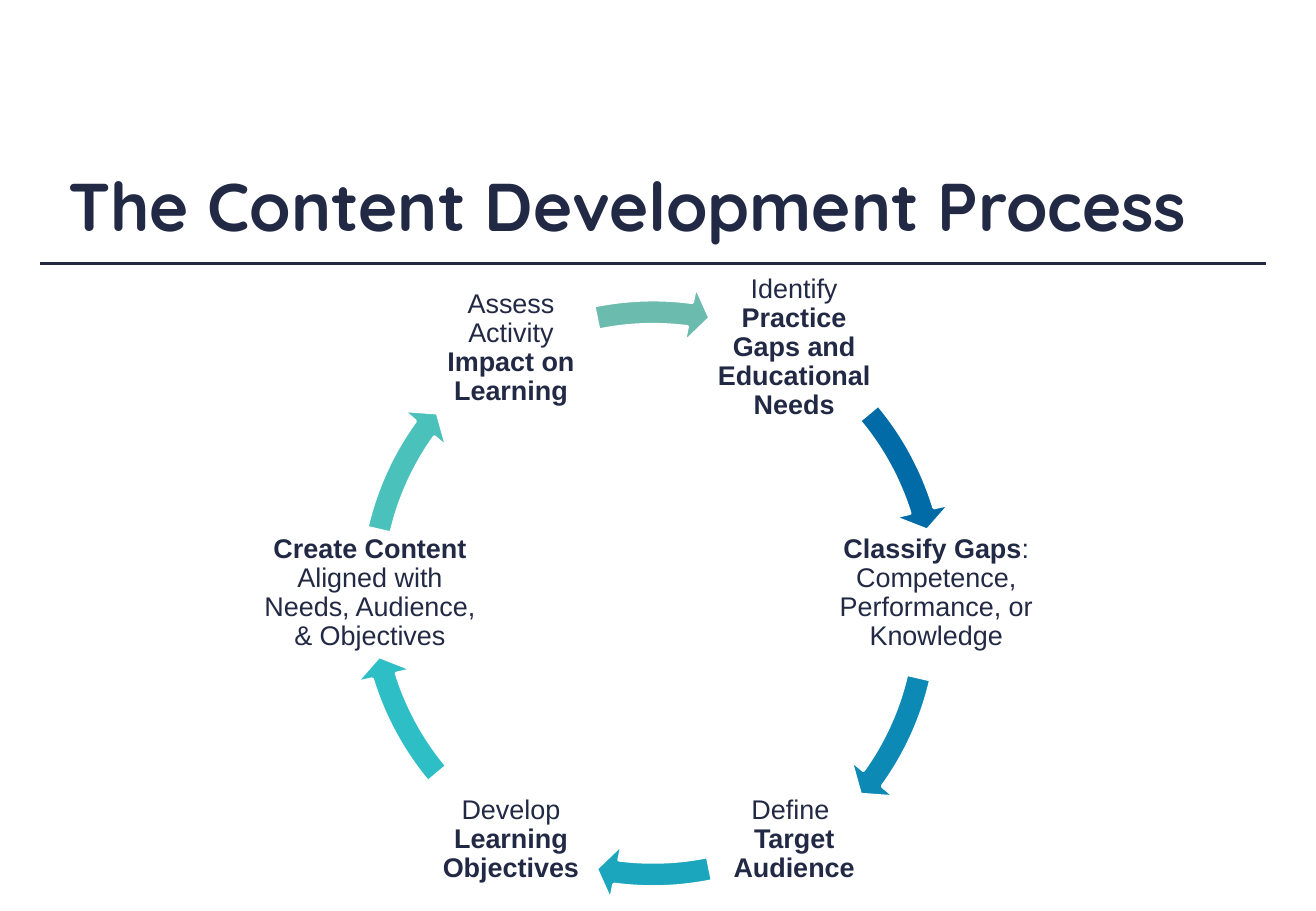
"""Build the slide showing the content development process as a six-step cycle."""
from dataclasses import dataclass

from lxml.etree import SubElement
from pptx import Presentation
from pptx.dml.color import RGBColor
from pptx.enum.shapes import MSO_CONNECTOR, MSO_SHAPE
from pptx.enum.text import MSO_ANCHOR, MSO_AUTO_SIZE, PP_ALIGN
from pptx.oxml.ns import qn
from pptx.slide import Slide
from pptx.text.text import TextFrame, _Paragraph
from pptx.util import Inches, Pt

NAVY = RGBColor(0x22, 0x29, 0x44)
WHITE = RGBColor(0xFF, 0xFF, 0xFF)
DEEP_BLUE = RGBColor(0x00, 0x6B, 0xA6)
BLUE = RGBColor(0x0C, 0x89, 0xB4)
CYAN = RGBColor(0x1B, 0xA6, 0xBE)
TURQUOISE = RGBColor(0x2E, 0xBE, 0xC5)
AQUA = RGBColor(0x4A, 0xC2, 0xBB)
SAGE = RGBColor(0x6B, 0xBB, 0xAE)

TITLE_FONT = {"name": "Quicksand", "size": Pt(40), "bold": True}
STEP_FONT = {"name": "Arial", "size": Pt(16)}
TITLE_FRAME = {
    "margin_left": Inches(0.02), "margin_right": Inches(0.02),
    "margin_top": Inches(0.01), "margin_bottom": Inches(0.01),
    "word_wrap": True, "auto_size": MSO_AUTO_SIZE.NONE,
    "vertical_anchor": MSO_ANCHOR.TOP,
}
STEP_FRAME = TITLE_FRAME | {
    "margin_top": Inches(0.02), "margin_bottom": Inches(0.02),
    "vertical_anchor": MSO_ANCHOR.MIDDLE,
}

RING_SIZE = 5.11
RING_LEFT, RING_TOP = 2.82, 2.33
STEP_HEIGHT = 1.05
NARROW, WIDE = 1.39, 1.97
TOP_ROW, MIDDLE_ROW, BOTTOM_ROW = 2.34, 4.36, 6.39


@dataclass(frozen=True)
class Span:
    text: str
    bold: bool = False
    break_after: bool = False


@dataclass(frozen=True)
class Step:
    left: float
    top: float
    width: float
    spans: tuple[Span, ...]
    color: RGBColor
    arrow_end: float
    arrow_start: float
    shift_x: float = 0
    shift_y: float = 0


STEPS = (
    Step(5.84, TOP_ROW, NARROW,
         (Span("Identify "), Span("Practice Gaps and Educational Needs", True)),
         DEEP_BLUE, 205.72, 192.04),
    Step(6.72, MIDDLE_ROW, WIDE,
         (Span("Classify Gaps", True), Span(": Competence, Performance, or Knowledge")),
         BLUE, 21.45, 7.77, -0.07, 0.17),
    Step(5.84, BOTTOM_ROW, NARROW,
         (Span("Define ", break_after=True), Span("Target Audience", True)),
         CYAN, 58.49, 47),
    Step(3.51, BOTTOM_ROW, NARROW,
         (Span("Develop "), Span("Learning Objectives", True)),
         TURQUOISE, 97.72, 84.04),
    Step(2.06, MIDDLE_ROW, WIDE,
         (Span("Create Content ", True), Span("Aligned with Needs, Audience, & Objectives")),
         AQUA, 129.45, 115.77),
    Step(3.51, TOP_ROW, NARROW,
         (Span("Assess Activity "), Span("Impact on Learning", True)),
         SAGE, 166.49, 155),
)


def apply_format(target: object, values: dict) -> None:
    for name, value in values.items():
        setattr(target, name, value)


def first_paragraph(frame: TextFrame, frame_format: dict, alignment: PP_ALIGN) -> _Paragraph:
    apply_format(frame, frame_format)
    para = frame.paragraphs[0]
    para.alignment = alignment
    return para


def add_span(para: _Paragraph, text: str, font_format: dict) -> None:
    span = para.add_run()
    span.text = text
    apply_format(span.font, font_format)
    span.font.color.rgb = NAVY


def add_rule(page: Slide) -> None:
    rule = page.shapes.add_connector(
        MSO_CONNECTOR.STRAIGHT, Inches(0.33), Inches(2.17), Inches(10.42), Inches(2.17))
    rule.line.color.rgb = NAVY
    rule.line.width = Pt(2.25)
    SubElement(rule._element.spPr, qn("a:effectLst"))


def add_title(page: Slide) -> None:
    title = page.shapes.title
    apply_format(title, {"left": Inches(0.54), "top": Inches(1.34),
                         "width": Inches(9.75), "height": Inches(0.85)})
    para = first_paragraph(title.text_frame, TITLE_FRAME, PP_ALIGN.LEFT)
    add_span(para, "The Content Development Process", TITLE_FONT)


def add_label(page: Slide, step: Step) -> None:
    box = page.shapes.add_textbox(
        Inches(step.left), Inches(step.top), Inches(step.width), Inches(STEP_HEIGHT))
    para = first_paragraph(box.text_frame, STEP_FRAME, PP_ALIGN.CENTER)
    para.line_spacing = 0.9
    for span in step.spans:
        add_span(para, span.text, STEP_FONT | {"bold": span.bold})
        if span.break_after:
            para.add_line_break()


def add_arrow(page: Slide, step: Step) -> None:
    arrow = page.shapes.add_shape(
        MSO_SHAPE.CIRCULAR_ARROW, Inches(RING_LEFT + step.shift_x),
        Inches(RING_TOP + step.shift_y), Inches(RING_SIZE), Inches(RING_SIZE))
    for index, value in enumerate((0.04, 2.51, step.arrow_end, step.arrow_start, 0.047)):
        arrow.adjustments[index] = value
    arrow.shadow.inherit = False
    arrow.fill.solid()
    arrow.fill.fore_color.rgb = step.color
    arrow.line.color.rgb = WHITE
    arrow.line.width = Pt(2)


def main() -> None:
    deck = Presentation()
    deck.slide_width, deck.slide_height = Inches(10.83), Inches(7.5)
    page = deck.slides.add_slide(deck.slide_layouts.get_by_name("Title Only"))
    add_rule(page)
    add_title(page)
    for step in STEPS:
        add_label(page, step)
        add_arrow(page, step)
    deck.save("out.pptx")


if __name__ == "__main__":
    main()
